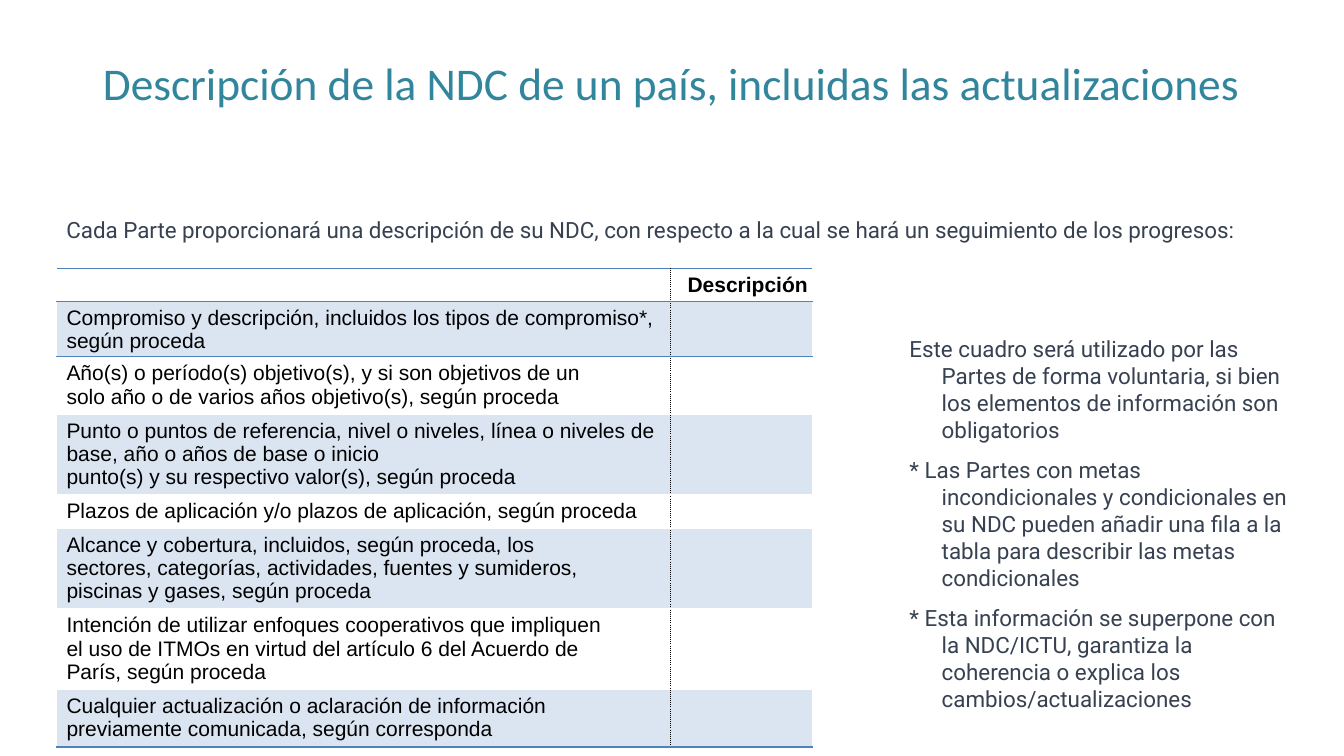
import pptx
import pptx.util
import pptx.dml.color
import pptx.enum.text
import pptx.oxml
import pptx.oxml.ns
from pptx.util import Inches

TEAL, SLATE, BLACK, BLUE = "31859C", "374151", "000000", "4F81BC"

COMMITMENT_ROWS = [
    ("Compromiso y descripción, incluidos los tipos de compromiso*, según proceda", 0.55, 0),
    ("Año(s) o período(s) objetivo(s), y si son objetivos de un solo año o de varios "
     "años objetivo(s), según proceda", 0.57, 0.6),
    ("Punto o puntos de referencia, nivel o niveles, línea o niveles de base, año o años "
     "de base o inicio\npunto(s) y su respectivo valor(s), según proceda", 0.79, 0),
    ("Plazos de aplicación y/o plazos de aplicación, según proceda", 0.33, 0),
    ("Alcance y cobertura, incluidos, según proceda, los sectores, categorías, actividades, "
     "fuentes y sumideros, piscinas y gases, según proceda", 0.79, 0.6),
    ("Intención de utilizar enfoques cooperativos que impliquen el uso de ITMOs en virtud "
     "del artículo 6 del Acuerdo de París, según proceda", 0.8, 0.6),
    ("Cualquier actualización o aclaración de información previamente comunicada, "
     "según corresponda", 0.57, 0.6),
]
NOTES = [
    "Este cuadro será utilizado por las Partes de forma voluntaria, si bien los elementos "
    "de información son obligatorios",
    "* Las Partes con metas incondicionales y condicionales en su NDC pueden añadir una fila "
    "a la tabla para describir las metas condicionales",
    "* Esta información se superpone con la NDC/ICTU, garantiza la coherencia o explica "
    "los cambios/actualizaciones",
]


def color(hex_value):
    return pptx.dml.color.RGBColor.from_string(hex_value)


def write(frame, text, size=16, font="Roboto", ink=SLATE, bold=False,
          gap=0, hanging=0, line_spacing=None):
    frame.word_wrap = True
    for index, line in enumerate(text.split("\n")):
        paragraph = frame.paragraphs[0] if index == 0 else frame.add_paragraph()
        paragraph.alignment = pptx.enum.text.PP_ALIGN.LEFT
        paragraph.space_before = pptx.util.Pt(gap if index else 0)
        if line_spacing:
            paragraph.line_spacing = line_spacing
        if hanging:
            properties = paragraph._p.get_or_add_pPr()
            properties.set("marL", str(Inches(hanging)))
            properties.set("indent", str(-Inches(hanging)))
        run = paragraph.add_run()
        run.text = line
        run.font.size = pptx.util.Pt(size)
        run.font.name = font
        run.font.bold = bold
        run.font.color.rgb = color(ink)


def set_margins(part, left, top, right, bottom):
    part.margin_left, part.margin_top = Inches(left), Inches(top)
    part.margin_right, part.margin_bottom = Inches(right), Inches(bottom)


def draw_border(cell, side, ink, width, dash):
    cell._tc.get_or_add_tcPr().append(pptx.oxml.parse_xml(
        f'<a:ln{side} {pptx.oxml.ns.nsdecls("a")} w="{pptx.util.Pt(width)}">'
        f'<a:solidFill><a:srgbClr val="{ink}"/></a:solidFill>'
        f'<a:prstDash val="{dash}"/></a:ln{side}>'))


def tint(cell, hex_value, opacity):
    cell.fill.solid()
    cell.fill.fore_color.rgb = color(hex_value)
    swatch = cell._tc.tcPr.find(pptx.oxml.ns.qn("a:solidFill"))[0]
    swatch.append(pptx.oxml.parse_xml(
        f'<a:alpha {pptx.oxml.ns.nsdecls("a")} val="{opacity * 1000}"/>'))


def place_title(slide, left, top, width, height):
    title = slide.shapes.title
    title.left, title.top = Inches(left), Inches(top)
    title.width, title.height = Inches(width), Inches(height)
    frame = title.text_frame
    frame.vertical_anchor = pptx.enum.text.MSO_ANCHOR.MIDDLE
    set_margins(frame, 0.1, 0.05, 0, 0.6)
    write(frame, "Descripción de la NDC de un país, incluidas las actualizaciones",
          size=32.4, font="Calibri", ink=TEAL, line_spacing=0.9)


def place_text(slide, left, top, width, height, text, margins, **text_format):
    frame = slide.shapes.add_textbox(
        Inches(left), Inches(top), Inches(width), Inches(height)).text_frame
    set_margins(frame, *margins)
    write(frame, text, **text_format)


def place_commitments(slide, left, top, width):
    heights = [0.33] + [height for _, height, _ in COMMITMENT_ROWS]
    table = slide.shapes.add_table(
        len(heights), 2, Inches(left), Inches(top), Inches(width),
        Inches(sum(heights))).table
    table.first_row = table.horz_banding = False
    table.columns[0].width = Inches(6.09)
    table.columns[1].width = Inches(width - 6.09)
    ruled_below = (0, 1, len(heights) - 1)
    for row, height in enumerate(heights):
        table.rows[row].height = Inches(height)
        for column in range(2):
            cell = table.cell(row, column)
            set_margins(cell, 0, 0, 0, 0)
            draw_border(cell, "LR"[column == 0], BLACK, 0.25, "sysDot")
            if row == 0 or row - 1 in ruled_below:
                draw_border(cell, "T", BLUE, 1, "solid")
            if row in ruled_below:
                draw_border(cell, "B", BLUE, 1, "solid")
            if row % 2:
                tint(cell, BLUE, 20)
            else:
                cell.fill.background()
    heading = table.cell(0, 1)
    set_margins(heading, 0.17, 0.05, 0, 0)
    write(heading.text_frame, "Descripción", size=15, font="Arial", ink=BLACK, bold=True)
    for row, (element, _, right_margin) in enumerate(COMMITMENT_ROWS, 1):
        cell = table.cell(row, 0)
        set_margins(cell, 0.1, 0.05, right_margin, 0)
        write(cell.text_frame, element, size=15, font="Arial", ink=BLACK)


def main():
    deck = pptx.Presentation()
    deck.slide_width, deck.slide_height = Inches(13.33), Inches(7.5)
    slide = deck.slides.add_slide(deck.slide_layouts[5])
    place_title(slide, 0.92, 0.4, 11.5, 1.45)
    place_text(slide, 0.56, 2.1, 11.85, 0.37,
               "Cada Parte proporcionará una descripción de su NDC, con respecto a la cual "
               "se hará un seguimiento de los progresos:", (0.1, 0.05, 0.1, 0.05))
    place_commitments(slide, 0.56, 2.66, 7.5)
    place_text(slide, 9.02, 3.31, 3.75, 3.26, "\n".join(NOTES), (0, 0.02, 0, 0),
               gap=9.6, hanging=0.32)
    deck.save("out.pptx")


if __name__ == "__main__":
    main()
